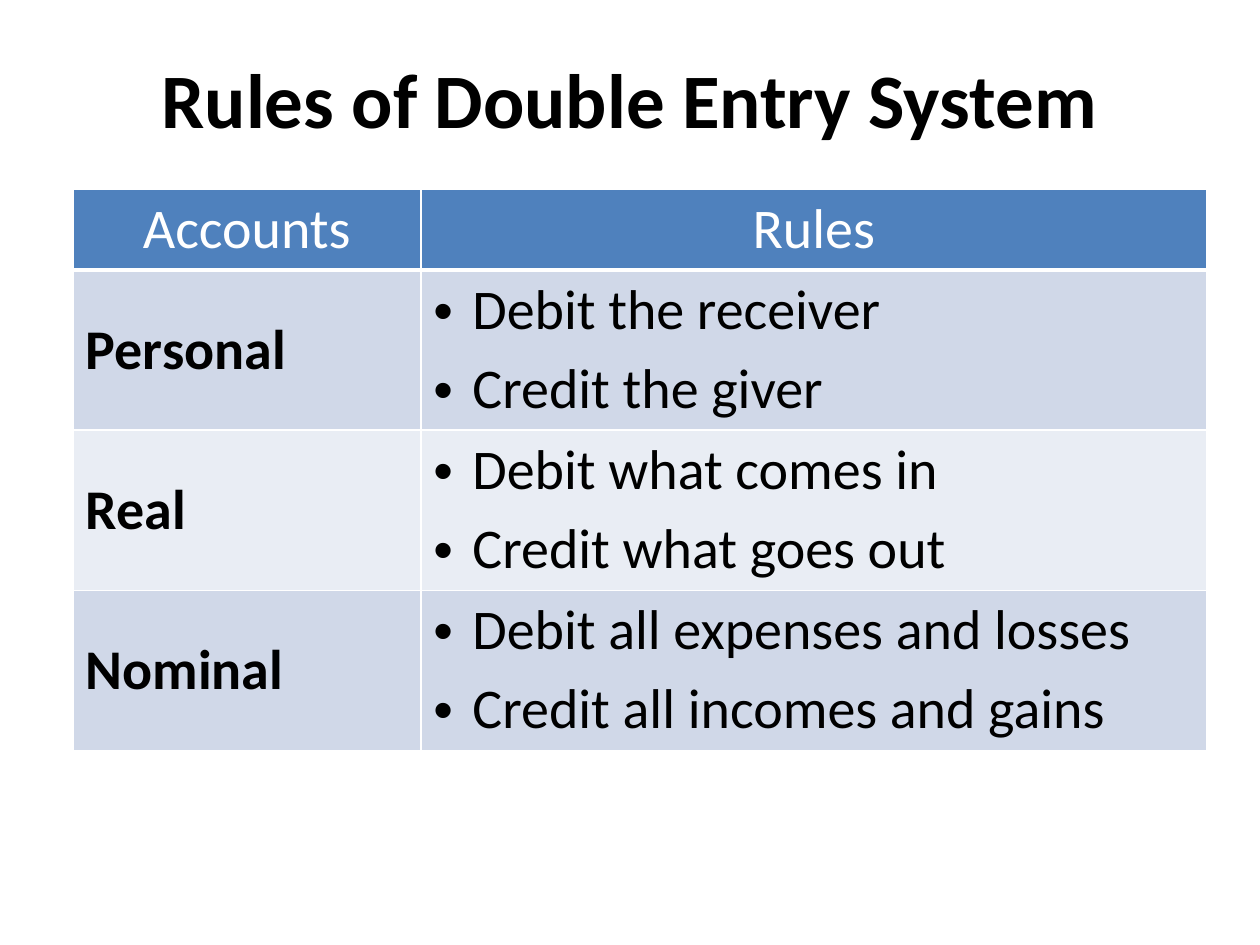
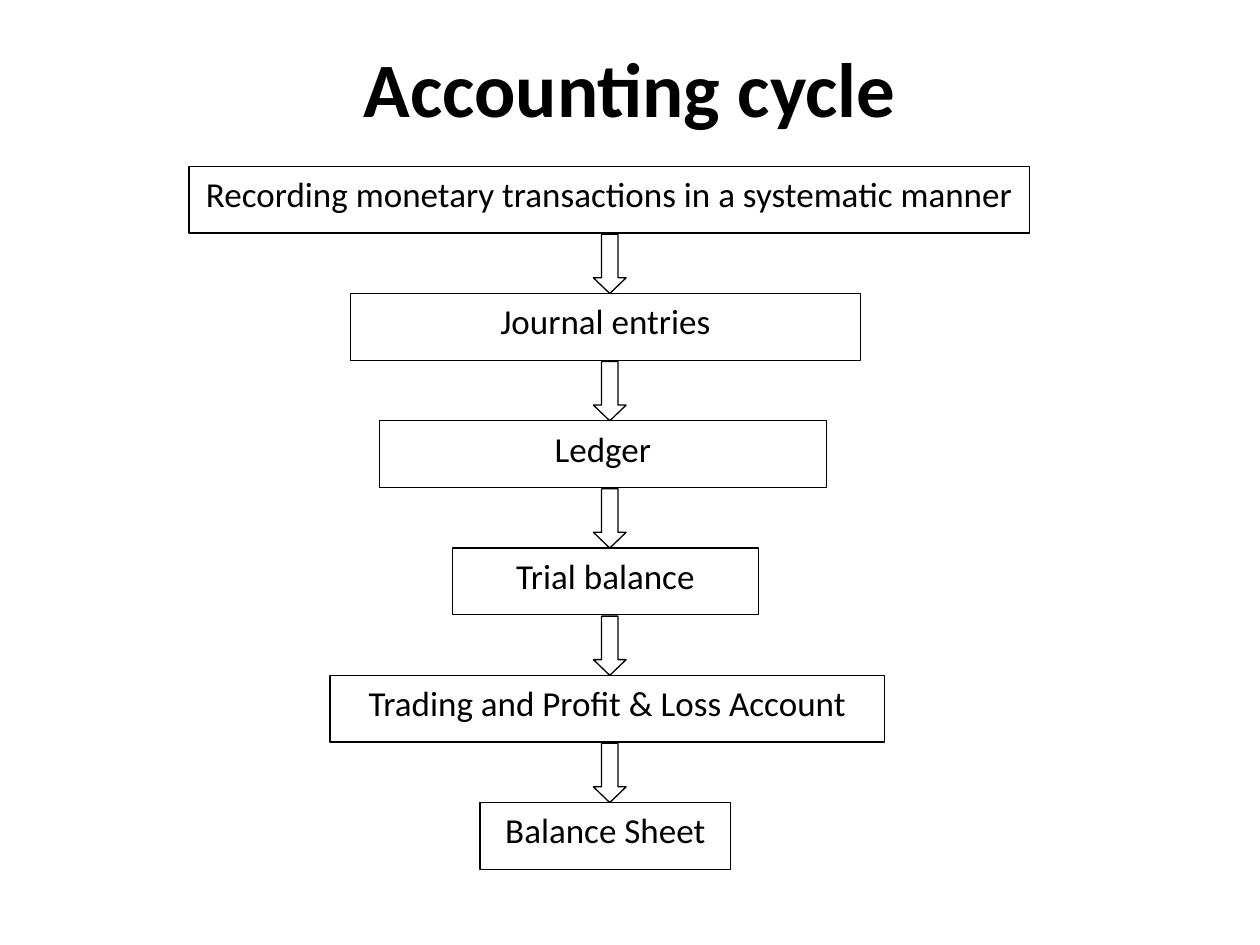
from dataclasses import dataclass

from lxml import etree
from pptx import Presentation
from pptx.dml.color import RGBColor
from pptx.enum.shapes import MSO_SHAPE
from pptx.enum.text import MSO_ANCHOR, PP_ALIGN
from pptx.oxml.ns import qn
from pptx.util import Inches, Pt

LEFT, CENTER = PP_ALIGN.LEFT, PP_ALIGN.CENTER
TOP, MIDDLE = MSO_ANCHOR.TOP, MSO_ANCHOR.MIDDLE
RECT, DOWN_ARROW = MSO_SHAPE.RECTANGLE, MSO_SHAPE.DOWN_ARROW

# Content
RULES_TITLE = "Rules of Double Entry System"
RULES_HEADER = ("Accounts", "Rules")
RULES = [
    ("Personal", ["Debit the receiver", "Credit the giver"]),
    ("Real", ["Debit what comes in", "Credit what goes out"]),
    ("Nominal", ["Debit all expenses and losses", "Credit all incomes and gains"]),
]
CYCLE_TITLE = "Accounting cycle"
CYCLE_STEPS = [  # text, left, width
    ("Recording monetary transactions in a systematic manner", 1.5, 6.67),
    ("Journal entries", 2.78, 4.05),
    ("Ledger", 3.01, 3.55),
    ("Trial balance", 3.59, 2.43),
    ("Trading and Profit & Loss Account", 2.62, 4.4),
    ("Balance Sheet", 3.81, 1.99),
]


@dataclass(frozen=True)
class Theme:
    font: str = "Calibri"
    black: str = "000000"
    white: str = "FFFFFF"
    header: str = "4F81BD"
    bands: tuple = ("D0D8E8", "E9EDF4")
    title_size: int = 44
    table_size: int = 32
    step_size: int = 20
    outline: float = 0.75


THEME = Theme()

# Layout, in inches
SLIDE_W, SLIDE_H = 10, 7.5
MARGIN = 0.5
TABLE_X, TABLE_Y = 0.58, 1.5
COL_WIDTHS = (2.76, 6.24)
LINE_H = 0.63
BULLET_INDENT = 0.31
STEP_Y, STEP_H, STEP_PITCH = 1.32, 0.53, 1.01
ARROW_X, ARROW_W, ARROW_H = 4.71, 0.26, 0.47


def rgb(value):
    return RGBColor.from_string(value)


def box(*lengths):
    return [Inches(n) for n in lengths]


def add_bullet(p):
    pPr = p._p.get_or_add_pPr()
    pPr.set("marL", str(Inches(BULLET_INDENT)))
    pPr.set("indent", str(-Inches(BULLET_INDENT)))
    etree.SubElement(pPr, qn("a:buFont")).set("typeface", "Arial")
    etree.SubElement(pPr, qn("a:buChar")).set("char", "•")


def write(tf, text, size, color=THEME.black, bold=False, align=LEFT,
          before=0, after=0, bullet=False):
    """Fill a text frame with one line, or with a list of lines."""
    lines = [text] if isinstance(text, str) else text
    for i, line in enumerate(lines):
        p = tf.add_paragraph() if i else tf.paragraphs[0]
        p.alignment = align
        p.space_before, p.space_after = Pt(before), Pt(after)
        if bullet:
            add_bullet(p)
        r = p.add_run()
        r.text = line
        r.font.name, r.font.size, r.font.bold = THEME.font, Pt(size), bold
        r.font.color.rgb = rgb(color)


def add_titled_slide(prs, text, top, height):
    s = prs.slides.add_slide(prs.slide_layouts[5])
    title = s.shapes.title
    title.left, title.top, title.width, title.height = box(
        MARGIN, top, SLIDE_W - 2 * MARGIN, height)
    title.text_frame.vertical_anchor = MIDDLE
    write(title.text_frame, text, THEME.title_size, bold=True, align=CENTER)
    return s


def style_cell(cell, fill, anchor=MIDDLE, bottom=1):
    tcPr = cell._tc.get_or_add_tcPr()
    for side, width in (("L", 1), ("R", 1), ("T", 1), ("B", bottom)):
        ln = etree.SubElement(tcPr, qn(f"a:ln{side}"), w=str(Pt(width)))
        solid = etree.SubElement(ln, qn("a:solidFill"))
        etree.SubElement(solid, qn("a:srgbClr"), val=THEME.white)
    cell.fill.solid()
    cell.fill.fore_color.rgb = rgb(fill)
    cell.vertical_anchor = anchor


def add_rules_table(s):
    heights = [LINE_H] + [LINE_H * len(rules) for _, rules in RULES]
    table = s.shapes.add_table(
        len(heights), len(COL_WIDTHS),
        *box(TABLE_X, TABLE_Y, sum(COL_WIDTHS), sum(heights))).table
    for col, width in zip(table.columns, COL_WIDTHS):
        col.width = Inches(width)
    for row, height in zip(table.rows, heights):
        row.height = Inches(height)

    size = THEME.table_size
    for c, text in enumerate(RULES_HEADER):
        cell = table.cell(0, c)
        style_cell(cell, THEME.header, TOP, bottom=3)
        write(cell.text_frame, text, size, THEME.white, align=CENTER, before=6)
    for r, (account, rules) in enumerate(RULES, 1):
        name_cell, rules_cell = table.cell(r, 0), table.cell(r, 1)
        for cell in (name_cell, rules_cell):
            style_cell(cell, THEME.bands[(r - 1) % 2])
        write(name_cell.text_frame, account, size, bold=True, before=6)
        write(rules_cell.text_frame, rules, size, before=6, bullet=True)


def add_outlined(shapes, kind, *lengths):
    sp = shapes.add_shape(kind, *box(*lengths))
    sp.shadow.inherit = False
    sp.fill.solid()
    sp.fill.fore_color.rgb = rgb(THEME.white)
    sp.line.color.rgb = rgb(THEME.black)
    sp.line.width = Pt(THEME.outline)
    return sp


def add_cycle(s):
    shapes = s.shapes.add_group_shape().shapes
    for i, (text, left, width) in enumerate(CYCLE_STEPS):
        top = STEP_Y + i * STEP_PITCH
        if i:
            arrow = add_outlined(shapes, DOWN_ARROW, ARROW_X, top - ARROW_H,
                                 ARROW_W, ARROW_H)
            arrow.adjustments[1] = 0.48
        step = add_outlined(shapes, RECT, left, top, width, STEP_H)
        step.text_frame.word_wrap = True
        step.text_frame.vertical_anchor = TOP
        write(step.text_frame, text, THEME.step_size, align=CENTER, after=10)


def main():
    prs = Presentation()
    prs.slide_width, prs.slide_height = box(SLIDE_W, SLIDE_H)
    add_rules_table(add_titled_slide(prs, RULES_TITLE, 0.3, 0.95))
    add_cycle(add_titled_slide(prs, CYCLE_TITLE, 0.25, 0.87))
    prs.save("out.pptx")


if __name__ == "__main__":
    main()
